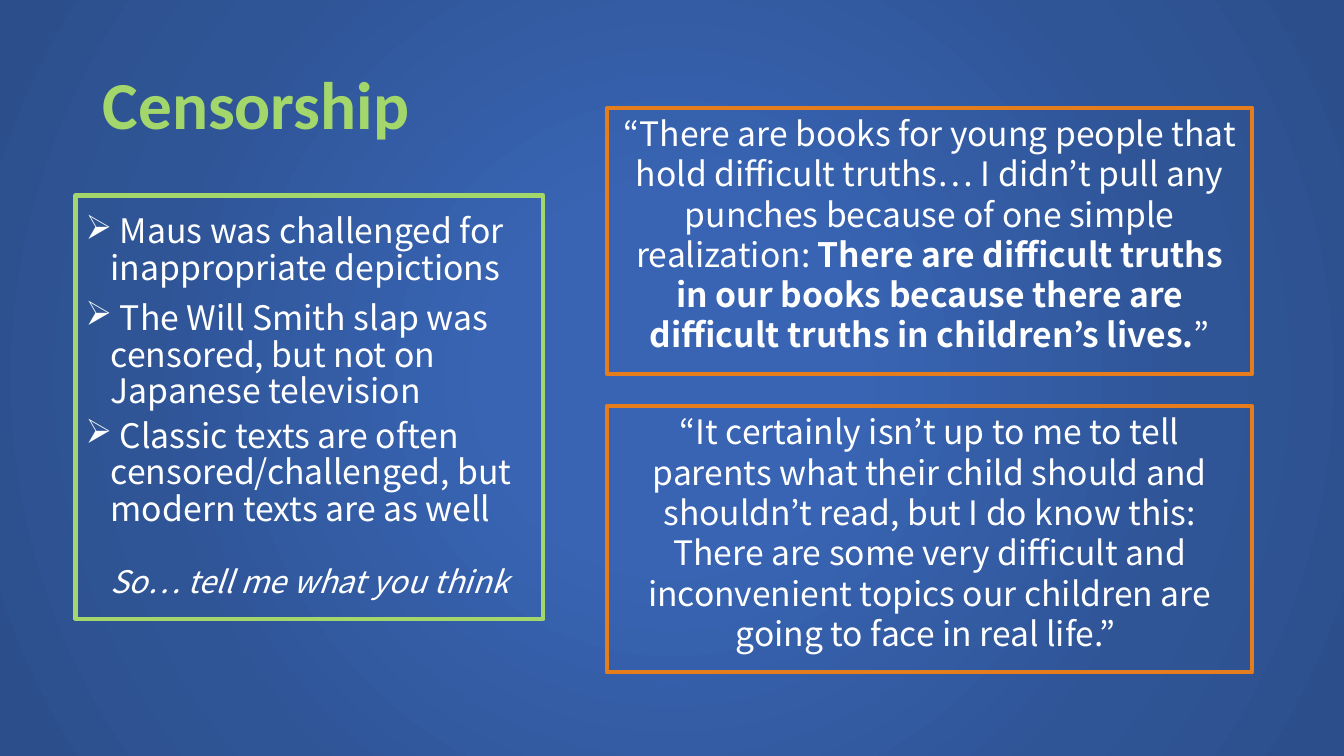
from dataclasses import dataclass
from typing import Optional

from lxml import etree
from pptx import Presentation
from pptx.dml.color import RGBColor
from pptx.enum.shapes import MSO_SHAPE
from pptx.enum.text import MSO_ANCHOR, PP_ALIGN
from pptx.oxml.ns import qn
from pptx.util import Inches, Pt

RECTANGLE = MSO_SHAPE.RECTANGLE
TOP, MIDDLE = MSO_ANCHOR.TOP, MSO_ANCHOR.MIDDLE
LEFT, CENTER = PP_ALIGN.LEFT, PP_ALIGN.CENTER

GREEN, ORANGE, WHITE = "A4D76B", "E67D1C", "FFFFFF"
BODY_FONT, TITLE_FONT = "Noto Sans CJK KR", "Calibri"
GRADIENT = [(0, "3864B3"), (23, "3864B3"), (69, "2F5597"), (97, "2C4F8C")]


@dataclass
class Run:
    text: str
    size: float = 24
    bold: bool = False
    italic: bool = False
    color: str = WHITE
    font: str = BODY_FONT


@dataclass
class Para:
    runs: list[Run]
    align: PP_ALIGN = CENTER
    before: float = 0
    after: float = 0
    line: float = 1.0
    bullet: Optional[str] = None


@dataclass
class Box:
    left: float
    top: float
    width: float
    height: float
    paras: list[Para]
    outline: Optional[str] = None
    anchor: MSO_ANCHOR = TOP


def rgb(value: str) -> RGBColor:
    return RGBColor.from_string(value)


def add_run(p, text: str, *, size: float, bold: bool, italic: bool, color: str, font: str) -> None:
    r = p.add_run()
    r.text = text
    r.font.size, r.font.name = Pt(size), font
    r.font.bold, r.font.italic = bold, italic
    r.font.color.rgb = rgb(color)


def set_bullet(p, char: str) -> None:
    """Give the paragraph a bullet with a quarter-inch hanging indent."""
    pPr = p._p.get_or_add_pPr()
    pPr.set("marL", str(Inches(0.25)))
    pPr.set("indent", str(Inches(-0.25)))
    etree.SubElement(pPr, qn("a:buChar"), char=char)


def draw_box(s, box: Box) -> None:
    place = [Inches(v) for v in (box.left, box.top, box.width, box.height)]
    if box.outline:
        sp = s.shapes.add_shape(RECTANGLE, *place)
        sp.shadow.inherit = False
        sp.fill.background()
        sp.line.color.rgb = rgb(box.outline)
        sp.line.width = Pt(3)
    else:
        sp = s.shapes.add_textbox(*place)
    tf = sp.text_frame
    tf.word_wrap = True
    tf.vertical_anchor = box.anchor
    for i, para in enumerate(box.paras):
        p = tf.add_paragraph() if i else tf.paragraphs[0]
        p.alignment, p.line_spacing = para.align, para.line
        p.space_before, p.space_after = Pt(para.before), Pt(para.after)
        if para.bullet:
            set_bullet(p, para.bullet)
        for run in para.runs:
            add_run(p, run.text, size=run.size, bold=run.bold, italic=run.italic,
                    color=run.color, font=run.font)


def set_background(s) -> None:
    """Fill the background with a gradient spreading from the centre."""
    fill = s.background.fill
    fill.gradient()
    grad = s.background._cSld.find(".//" + qn("a:gradFill"))
    for child in list(grad):
        grad.remove(child)
    stops = etree.SubElement(grad, qn("a:gsLst"))
    for pos, color in GRADIENT:
        gs = etree.SubElement(stops, qn("a:gs"), pos=str(pos * 1000))
        etree.SubElement(gs, qn("a:srgbClr"), val=color)
    path = etree.SubElement(grad, qn("a:path"), {"path": "circle"})
    etree.SubElement(path, qn("a:fillToRect"), {side: "50000" for side in "ltrb"})


def point(text: str, before: float = 10, after: float = 0) -> Para:
    return Para([Run(text, size=24.1)], LEFT, before, after, 0.9, "➢")


def quote(top: float, para: Para) -> Box:
    return Box(6.02, top, 6.4, 2.64, [para], ORANGE)


BOXES = [
    Box(0.92, 0.48, 11.5, 1.18, [
        Para([Run("Censorship", 48, bold=True, color=GREEN, font=TITLE_FONT)], LEFT, line=0.9),
    ], anchor=MIDDLE),
    quote(1.07, Para([
        Run("“There are books for young people that hold difficult truths… I didn’t pull any "
            "punches because of one simple realization: "),
        Run("There are difficult truths in our books because there are difficult truths in "
            "children’s lives.", bold=True),
        Run("”"),
    ])),
    Box(0.75, 1.94, 4.64, 4.2, [
        point(" Maus was challenged for inappropriate depictions"),
        point(" The Will Smith slap was censored, but not on Japanese television"),
        point(" Classic texts are often censored/challenged, but modern texts are as well", 6, 12),
        Para([Run("So… tell me what you think", 22.2, italic=True)], before=12),
    ], GREEN, MIDDLE),
    quote(4.03, Para([
        Run("“It certainly isn’t up to me to tell parents what their child should and shouldn’t "
            "read, but I do know this: There are some very difficult and inconvenient topics our "
            "children are going to face in real life.” "),
    ], before=10)),
]


def main() -> None:
    prs = Presentation()
    prs.slide_width, prs.slide_height = Inches(13.33), Inches(7.5)
    s = prs.slides.add_slide(prs.slide_layouts[6])
    set_background(s)
    for box in BOXES:
        draw_box(s, box)
    prs.save("out.pptx")


if __name__ == "__main__":
    main()
